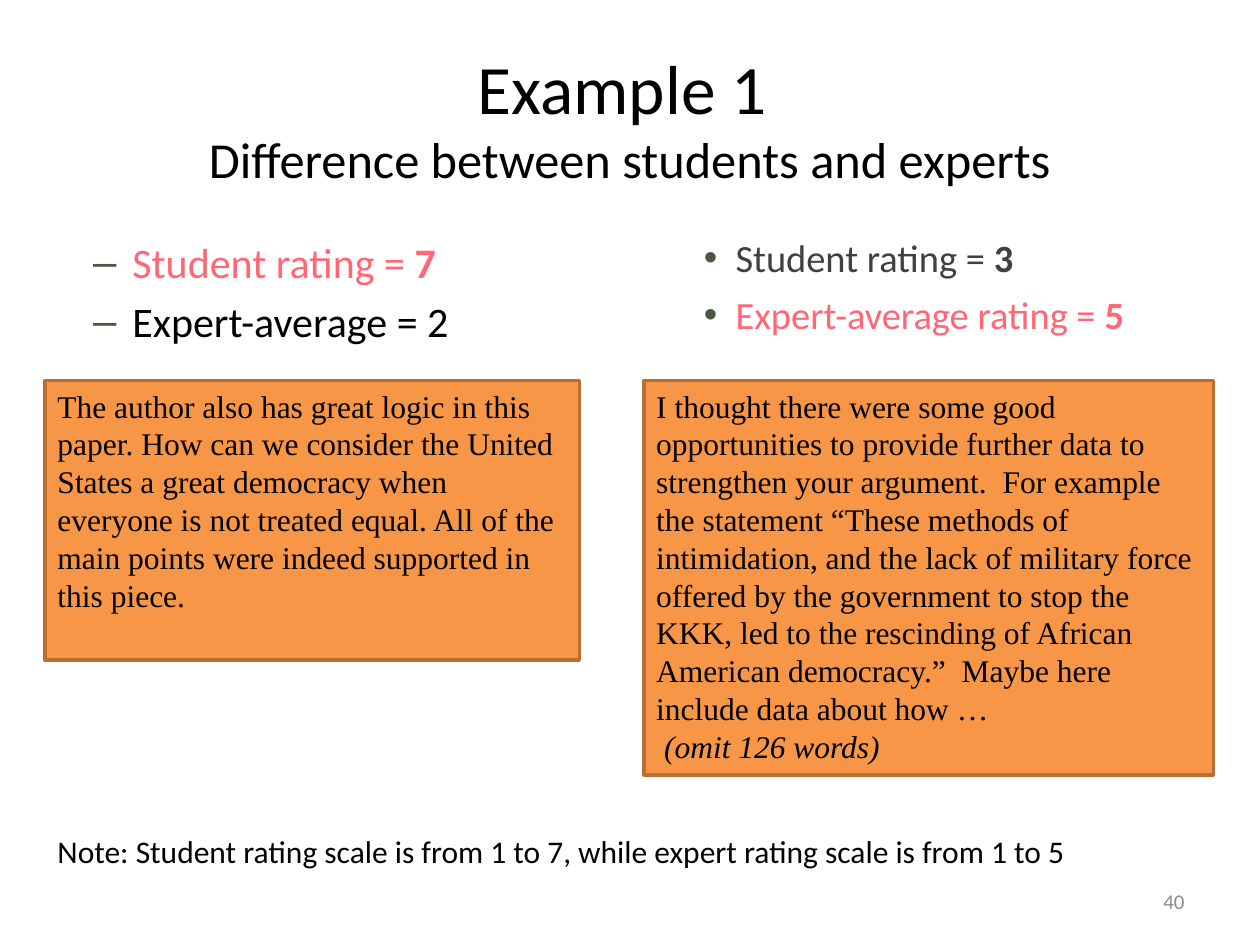
"""Builds the slide comparing student and expert ratings."""
from lxml.etree import SubElement
from pptx import Presentation
from pptx.dml.color import RGBColor as RGB
from pptx.enum.shapes import MSO_SHAPE as SHAPE
from pptx.enum.text import MSO_ANCHOR as ANCHOR, PP_ALIGN as ALIGN
from pptx.oxml.ns import qn
from pptx.util import Cm, Pt

COLORS = {
    "black": "000000", "dark": "404040", "gray": "8C8C8C", "pink": "FF6776",
    "bullet": "4D5843", "orange": "F79646", "border": "B76F34",
}


def add_run(p, text, size=18, color="black", font="Calibri", bold=False, italic=False):
    r = p.add_run()
    r.text = text
    r.font.size = Pt(size)
    r.font.name = font
    r.font.bold = bold
    r.font.italic = italic
    r.font.color.rgb = RGB.from_string(COLORS[color])


def add_box(left, top, width, height, anchor=ANCHOR.TOP, wrap=True):
    sp = s.shapes.add_textbox(Cm(left), Cm(top), Cm(width), Cm(height))
    tf = sp.text_frame
    tf.word_wrap = wrap
    tf.vertical_anchor = anchor
    return tf


prs = Presentation()
prs.slide_width, prs.slide_height = Cm(25.4), Cm(19.05)
s = prs.slides.add_slide(prs.slide_layouts[6])

p = add_box(1.27, 0.76, 22.86, 3.18, anchor=ANCHOR.MIDDLE).paragraphs[0]
p.alignment = ALIGN.CENTER
add_run(p, "Example 1 ", size=39.6)
p.add_line_break()
add_run(p, "Difference between students and experts", size=28.8)

ratings = [
    (0.36, 4.65, 24, "–", 2.06, 0.79, 4.8, [
        ("Student rating = ", "7", "pink"),
        ("Expert-average = 2", "", "black")]),
    (12.98, 4.6, 22, "•", 1.6, 0.64, 6, [
        ("Student rating = ", "3", "dark"),
        ("Expert-average rating = ", "5", "pink")]),
]
for left, top, size, bullet, margin, hang, gap, lines in ratings:
    tf = add_box(left, top, 10.72, 4.55)
    for i, (label, value, color) in enumerate(lines):
        p = tf.add_paragraph() if i else tf.paragraphs[0]
        p.space_before = Pt(gap)
        add_run(p, label, size=size, color=color)
        if value:
            add_run(p, value, size=size, color=color, bold=True)
        pPr = p._p.get_or_add_pPr()
        pPr.set("marL", str(Cm(margin)))
        pPr.set("indent", str(-Cm(hang)))
        clr = SubElement(pPr, qn("a:buClr"))
        SubElement(clr, qn("a:srgbClr"), val=COLORS["bullet"])
        SubElement(pPr, qn("a:buFont"), typeface="Arial")
        SubElement(pPr, qn("a:buChar"), char=bullet)

comments = [
    (0.91, 10.77, 5.64, [
        ("The author also has great logic in this paper. How can we consider the "
         "United States a great democracy when everyone is not treated equal. All of "
         "the main points were indeed supported in this piece.", False)]),
    (12.98, 11.48, 7.95, [
        ("I thought there were some good opportunities to provide further data to "
         "strengthen your argument.  For example the statement “These methods of "
         "intimidation, and the lack of military force offered by the government to "
         "stop the KKK, led to the rescinding of African American democracy.”  Maybe "
         "here include data about how …", False),
        (" (omit 126 words)", True)]),
]
for left, width, height, paragraphs in comments:
    sp = s.shapes.add_shape(SHAPE.RECTANGLE, Cm(left), Cm(7.67), Cm(width), Cm(height))
    sp.shadow.inherit = False
    sp.fill.solid()
    sp.fill.fore_color.rgb = RGB.from_string(COLORS["orange"])
    sp.line.color.rgb = RGB.from_string(COLORS["border"])
    sp.line.width = Pt(2)
    tf = sp.text_frame
    tf.word_wrap = True
    tf.vertical_anchor = ANCHOR.TOP
    for i, (text, italic) in enumerate(paragraphs):
        p = tf.add_paragraph() if i else tf.paragraphs[0]
        p.alignment = ALIGN.LEFT
        add_run(p, text, font="Times New Roman", italic=italic)

p = add_box(0.91, 16.64, 21.74, 1.02, wrap=False).paragraphs[0]
add_run(p, "Note: Student rating scale is from 1 to 7, while expert rating scale is from 1 to 5")

p = add_box(18.21, 17.65, 5.92, 1.02, anchor=ANCHOR.MIDDLE).paragraphs[0]
p.alignment = ALIGN.RIGHT
add_run(p, "40", size=12, color="gray")

prs.save("out.pptx")
